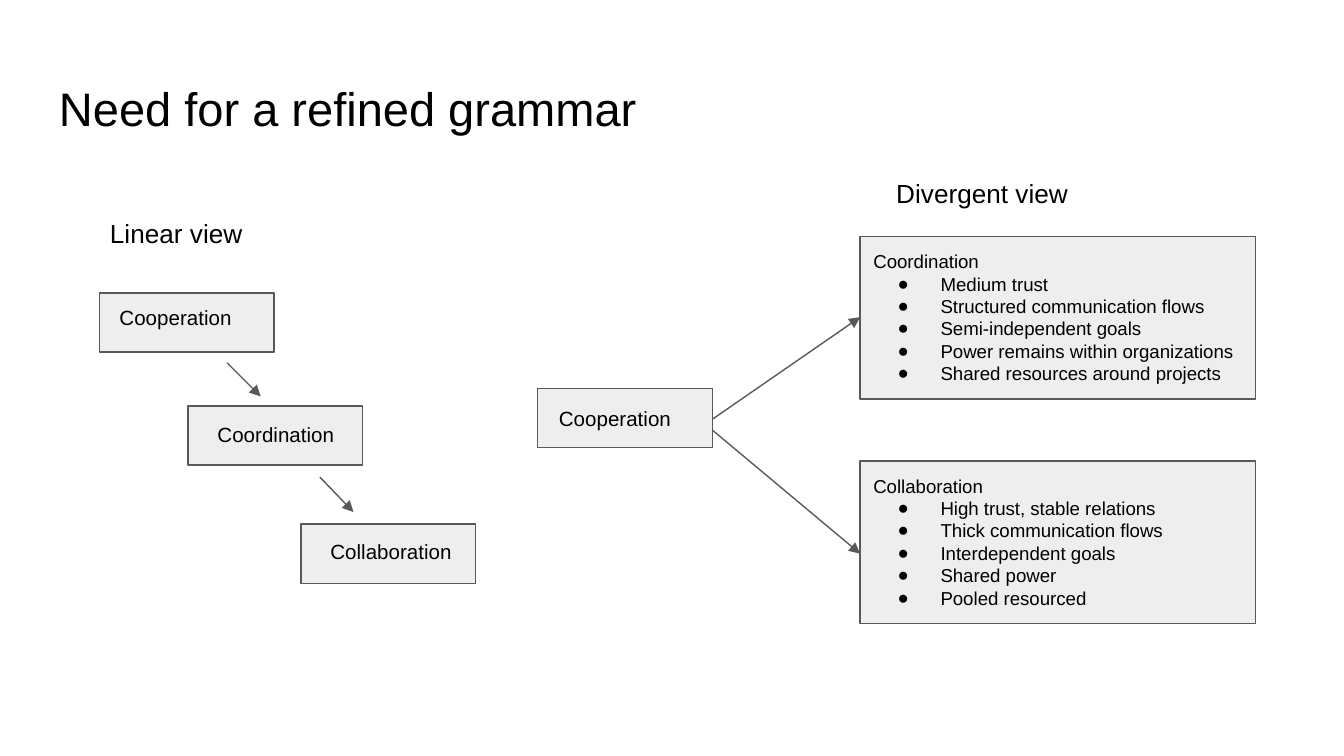
from dataclasses import dataclass

from lxml import etree
from pptx import Presentation
from pptx.dml.color import RGBColor
from pptx.enum.shapes import MSO_CONNECTOR, MSO_SHAPE
from pptx.enum.text import MSO_ANCHOR
from pptx.oxml.ns import qn
from pptx.util import Inches, Pt

RECT = MSO_SHAPE.RECTANGLE
STRAIGHT = MSO_CONNECTOR.STRAIGHT
TOP, MIDDLE = MSO_ANCHOR.TOP, MSO_ANCHOR.MIDDLE
FONT, BLACK, GREY, PALE = "Arial", "000000", "595959", "EEEEEE"
NODE_W, NODE_H = 1.3, 0.44
PANEL_X, PANEL_W, PANEL_H = 6.4, 2.94, 1.21


@dataclass
class Label:
    text: str
    x: float
    y: float
    w: float
    h: float
    size: float


@dataclass
class Node:
    x: float
    y: float
    label: Label


@dataclass
class Panel:
    y: float
    text_w: float
    heading: str
    points: list[str]


@dataclass
class Arrow:
    x1: float
    y1: float
    x2: float
    y2: float


def rgb(value: str) -> RGBColor:
    return RGBColor.from_string(value)


def add_box(slide, x: float, y: float, w: float, h: float) -> None:
    sp = slide.shapes.add_shape(RECT, Inches(x), Inches(y), Inches(w), Inches(h))
    sp.shadow.inherit = False
    sp.fill.solid()
    sp.fill.fore_color.rgb = rgb(PALE)
    sp.line.color.rgb = rgb(GREY)
    sp.line.width = Pt(0.75)


def add_bullet(p) -> None:
    pPr = p._p.get_or_add_pPr()
    pPr.set("marL", str(Inches(0.5)))
    pPr.set("indent", str(Inches(-0.32)))
    color = etree.SubElement(pPr, qn("a:buClr"))
    etree.SubElement(color, qn("a:srgbClr"), val=BLACK)
    etree.SubElement(pPr, qn("a:buFont"), typeface=FONT)
    etree.SubElement(pPr, qn("a:buChar"), char="●")


def add_label(slide, label: Label, points=(), anchor=TOP) -> None:
    sp = slide.shapes.add_textbox(Inches(label.x), Inches(label.y),
                                  Inches(label.w), Inches(label.h))
    tf = sp.text_frame
    tf.word_wrap = True
    tf.vertical_anchor = anchor
    tf.margin_left = tf.margin_right = Inches(0.1)
    tf.margin_top = tf.margin_bottom = Inches(0.1)
    tf.text = "\n".join([label.text, *points])
    for i, p in enumerate(tf.paragraphs):
        if i > 0:
            add_bullet(p)
        for r in p.runs:
            r.font.name = FONT
            r.font.size = Pt(label.size)
            r.font.color.rgb = rgb(BLACK)


def add_node(slide, node: Node) -> None:
    add_box(slide, node.x, node.y, NODE_W, NODE_H)
    add_label(slide, node.label)


def add_panel(slide, panel: Panel) -> None:
    add_box(slide, PANEL_X, panel.y, PANEL_W, PANEL_H)
    heading = Label(panel.heading, PANEL_X, panel.y, panel.text_w, PANEL_H, 10)
    add_label(slide, heading, panel.points)


def add_arrow(slide, a: Arrow) -> None:
    line = slide.shapes.add_connector(STRAIGHT, Inches(a.x1), Inches(a.y1),
                                      Inches(a.x2), Inches(a.y2))
    line.line.color.rgb = rgb(GREY)
    line.line.width = Pt(0.75)
    etree.SubElement(line.line._get_or_add_ln(), qn("a:tailEnd"), type="triangle")
    etree.SubElement(line._element.spPr, qn("a:effectLst"))


TITLE = Label("Need for a refined grammar", 0.34, 0.49, 9.32, 0.63, 25.2)
VIEWS = [
    Label("Linear view", 0.72, 1.52, 1.24, 0.44, 14),
    Label("Divergent view", 6.57, 1.22, 1.78, 0.44, 14),
]
NODES = [
    Node(0.74, 2.18, Label("Cooperation", 0.79, 2.18, 1.09, 0.39, 11)),
    Node(1.4, 3.02, Label("Coordination", 1.52, 3.05, 1.3, 0.39, 11)),
    Node(2.24, 3.9, Label("Collaboration", 2.36, 3.92, 1.18, 0.39, 11)),
    Node(4, 2.89, Label("Cooperation", 4.06, 2.93, 1.09, 0.39, 11)),
]
PANELS = [
    Panel(1.76, 2.88, "Coordination", [
        "Medium trust", "Structured communication flows",
        "Semi-independent goals", "Power remains within organizations",
        "Shared resources around projects"]),
    Panel(3.43, 2.94, "Collaboration", [
        "High trust, stable relations", "Thick communication flows",
        "Interdependent goals", "Shared power", "Pooled resourced"]),
]
ARROWS = [
    Arrow(1.69, 2.7, 1.94, 2.95),
    Arrow(2.38, 3.55, 2.63, 3.81),
    Arrow(5.3, 3.12, PANEL_X, 2.36),
    Arrow(5.3, 3.2, PANEL_X, 4.12),
]


def main() -> None:
    # 16:9 slide
    prs = Presentation()
    prs.slide_width = Inches(10)
    prs.slide_height = Inches(10 * 9 / 16)
    slide = prs.slides.add_slide(prs.slide_layouts[6])

    # Title and view headings
    add_label(slide, TITLE, anchor=MIDDLE)
    for view in VIEWS:
        add_label(slide, view)

    # Steps, detail panels and the arrows between them
    for node in NODES:
        add_node(slide, node)
    for panel in PANELS:
        add_panel(slide, panel)
    for arrow in ARROWS:
        add_arrow(slide, arrow)

    prs.save("out.pptx")


if __name__ == "__main__":
    main()
